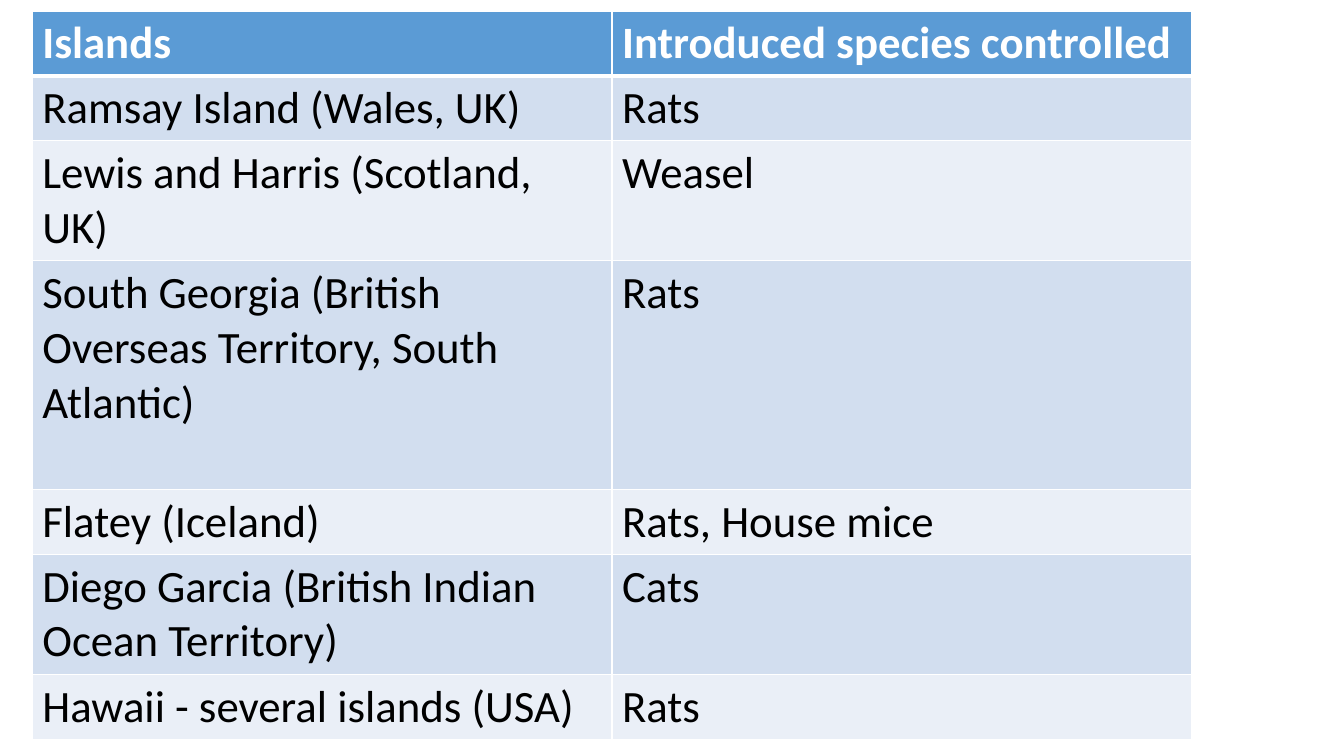
from lxml import etree
from pptx import Presentation
from pptx.dml.color import RGBColor
from pptx.oxml.ns import qn
from pptx.util import Inches, Pt

COLORS = {
    "header": "5B9BD5",
    "odd": "D2DEEF",
    "even": "EAEFF7",
    "border": "FFFFFF",
    "header_text": "FFFFFF",
    "text": "000000",
}
# Island, species controlled, row height in inches
ROWS = [
    ("Islands", "Introduced species controlled", 0.64),
    ("Ramsay Island (Wales, UK)", "Rats", 0.64),
    ("Lewis and Harris (Scotland, UK)", "Weasel", 1.19),
    ("South Georgia (British Overseas Territory, South\nAtlantic)", "Rats", 2.27),
    ("Flatey (Iceland)", "Rats, House mice", 0.64),
    ("Diego Garcia (British Indian Ocean Territory)", "Cats", 1.19),
    ("Hawaii - several islands (USA)", "Rats", 0.64),
]


def rgb(name):
    return RGBColor.from_string(COLORS[name])


def set_borders(cell, top, bottom):
    """Draw the four cell borders, with top and bottom widths in points."""
    tc_pr = cell._tc.get_or_add_tcPr()
    sides = (("a:lnL", 1), ("a:lnR", 1), ("a:lnT", top), ("a:lnB", bottom))
    for i, (tag, width) in enumerate(sides):
        ln = etree.Element(qn(tag), w=str(Pt(width)))
        fill = etree.SubElement(ln, qn("a:solidFill"))
        etree.SubElement(fill, qn("a:srgbClr"), val=COLORS["border"])
        tc_pr.insert(i, ln)


def format_cell(cell, content, row):
    header = row == 0
    cell.text = content
    cell.fill.solid()
    cell.fill.fore_color.rgb = rgb("header" if header else "odd" if row % 2 else "even")
    for p in cell.text_frame.paragraphs:
        p.font.name = "Calibri"
        p.font.size = Pt(32)
        p.font.bold = header
        p.font.color.rgb = rgb("header_text" if header else "text")
    set_borders(cell, top=3 if row == 1 else 1, bottom=3 if header else 1)


def add_islands_table(slide, left, top, width):
    height = sum(row[-1] for row in ROWS)
    frame = slide.shapes.add_table(
        len(ROWS), 2, Inches(left), Inches(top), Inches(width), Inches(height))
    table = frame.table
    for r, (island, species, row_height) in enumerate(ROWS):
        table.rows[r].height = Inches(row_height)
        for c, content in enumerate((island, species)):
            format_cell(table.cell(r, c), content, r)


def main():
    prs = Presentation()
    prs.slide_width, prs.slide_height = Inches(13.33), Inches(7.5)
    slide = prs.slides.add_slide(prs.slide_layouts[6])
    add_islands_table(slide, 0.32, 0.11, 11.5)
    prs.save("out.pptx")


if __name__ == "__main__":
    main()
